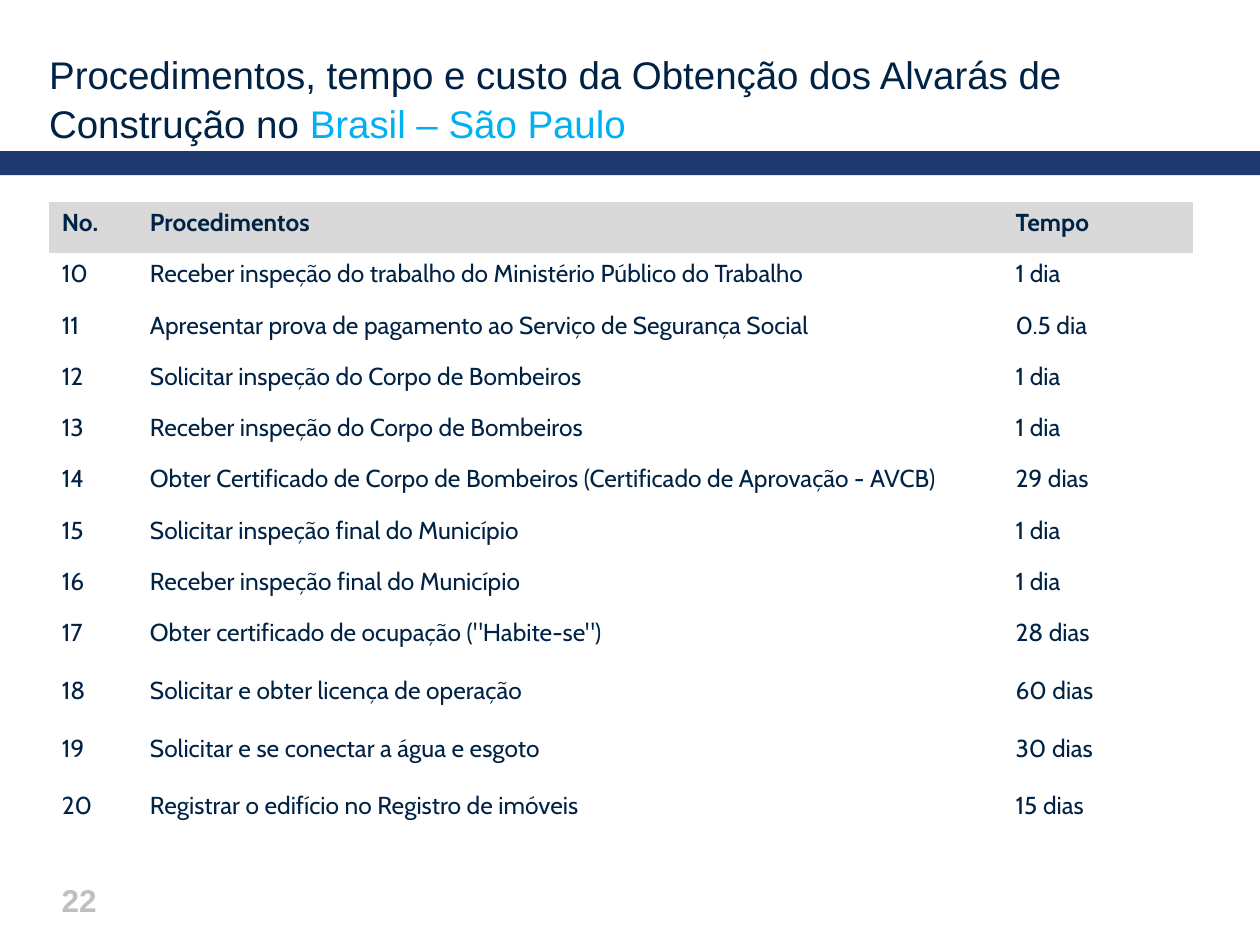
"""Builds a slide listing building permit procedures 10 to 20 in São Paulo."""
from pptx import Presentation
from pptx import util as u
from pptx.dml.color import RGBColor
from pptx.enum import shapes, text

WIDTH, HEIGHT = 10, 7.5
LEFT = 0.39
NAVY, SKY, BAR, SILVER, GREY = "002345", "00B0F0", "1F396F", "D9D9D9", "BFBFBF"
TITLE = [
    ("Procedimentos, tempo e custo da Obtenção dos Alvarás de Construção no ", NAVY),
    ("Brasil – São Paulo", SKY),
]
HEADER = ("No.", "Procedimentos", "Tempo")
SINGLE = [
    ("10", "Receber inspeção do trabalho do Ministério Público do Trabalho", "1 dia"),
    ("11", "Apresentar prova de pagamento ao Serviço de Segurança Social", "0.5 dia"),
    ("12", "Solicitar inspeção do Corpo de Bombeiros", "1 dia"),
    ("13", "Receber inspeção do Corpo de Bombeiros", "1 dia"),
    ("14", "Obter Certificado de Corpo de Bombeiros (Certificado de Aprovação - AVCB)", "29 dias"),
    ("15", "Solicitar inspeção final do Município", "1 dia"),
    ("16", "Receber inspeção final do Município", "1 dia"),
]
GROUPED = [
    ("17", 'Obter certificado de ocupação ("Habite-se")', "28 dias"),
    ("18", "Solicitar e obter licença de operação", "60 dias"),
    ("19", "Solicitar e se conectar a água e esgoto", "30 dias"),
    ("20", "Registrar o edifício no Registro de imóveis", "15 dias"),
]
COLUMNS = (0.7, 6.87, 1.51)
ROW, GROUP_GAP = 0.407, 16
PLAIN_STYLE = "{2D5ABB26-0587-4C30-8999-92F81FD0307C}"


def colour(value):
    return RGBColor.from_string(value)


def inches(*lengths):
    return [u.Inches(length) for length in lengths]


def assign(target, values):
    for name, value in values.items():
        setattr(target, name, value)


def add_span(para, words, size, shade, face="Arial", bold=False):
    span = para.add_run()
    span.text = words
    assign(span.font, {"size": u.Pt(size), "name": face, "bold": bold})
    span.font.color.rgb = colour(shade)


def add_bar(page):
    bar = page.shapes.add_shape(shapes.MSO_SHAPE.RECTANGLE, *inches(0, 1.2, WIDTH, 0.19))
    bar.shadow.inherit = False
    bar.fill.solid()
    bar.fill.fore_color.rgb = colour(BAR)
    bar.line.fill.background()


def format_title(page):
    title = page.shapes.title
    assign(title, dict(zip(("left", "top", "width", "height"), inches(LEFT, 0.33, 9.25, 0.83))))
    assign(title.text_frame, {
        "margin_left": 0, "margin_right": 0, "margin_top": 0, "margin_bottom": 0,
        "word_wrap": True, "auto_size": text.MSO_AUTO_SIZE.NONE,
        "vertical_anchor": text.MSO_ANCHOR.BOTTOM,
    })
    para = title.text_frame.paragraphs[0]
    assign(para, {"alignment": text.PP_ALIGN.LEFT, "line_spacing": 1.06})
    for words, shade in TITLE:
        add_span(para, words, 22, shade)


def add_procedures(page):
    rows = [[HEADER]] + [[entry] for entry in SINGLE] + [GROUPED]
    frame = page.shapes.add_table(
        len(rows), len(COLUMNS), *inches(LEFT, 1.6, sum(COLUMNS), ROW * len(rows)))
    table = frame.table
    assign(table, {"first_row": False, "horz_banding": False})
    for style in frame.element.xpath(".//a:tableStyleId"):
        style.text = PLAIN_STYLE
    for column, width in zip(table.columns, COLUMNS):
        column.width = u.Inches(width)
    for index, entries in enumerate(rows):
        table.rows[index].height = u.Inches(ROW)
        for cell, lines in zip(table.rows[index].cells, zip(*entries)):
            if index == 0:
                cell.fill.solid()
                cell.fill.fore_color.rgb = colour(SILVER)
            else:
                cell.fill.background()
            for number, line in enumerate(lines):
                para = cell.text_frame.add_paragraph() if number else cell.text_frame.paragraphs[0]
                if number:
                    para.space_before = u.Pt(GROUP_GAP)
                add_span(para, line, 14, NAVY, "Cabin", index == 0)


def add_page_number(page):
    box = page.shapes.add_textbox(*inches(LEFT, 6.94, 0.6, 0.39))
    box.text_frame.word_wrap = True
    add_span(box.text_frame.paragraphs[0], "22", 18, GREY, bold=True)


def main():
    deck = Presentation()
    assign(deck, dict(zip(("slide_width", "slide_height"), inches(WIDTH, HEIGHT))))
    page = deck.slides.add_slide(deck.slide_layouts.get_by_name("Title Only"))
    add_bar(page)
    add_procedures(page)
    format_title(page)
    add_page_number(page)
    deck.save("out.pptx")


if __name__ == "__main__":
    main()
